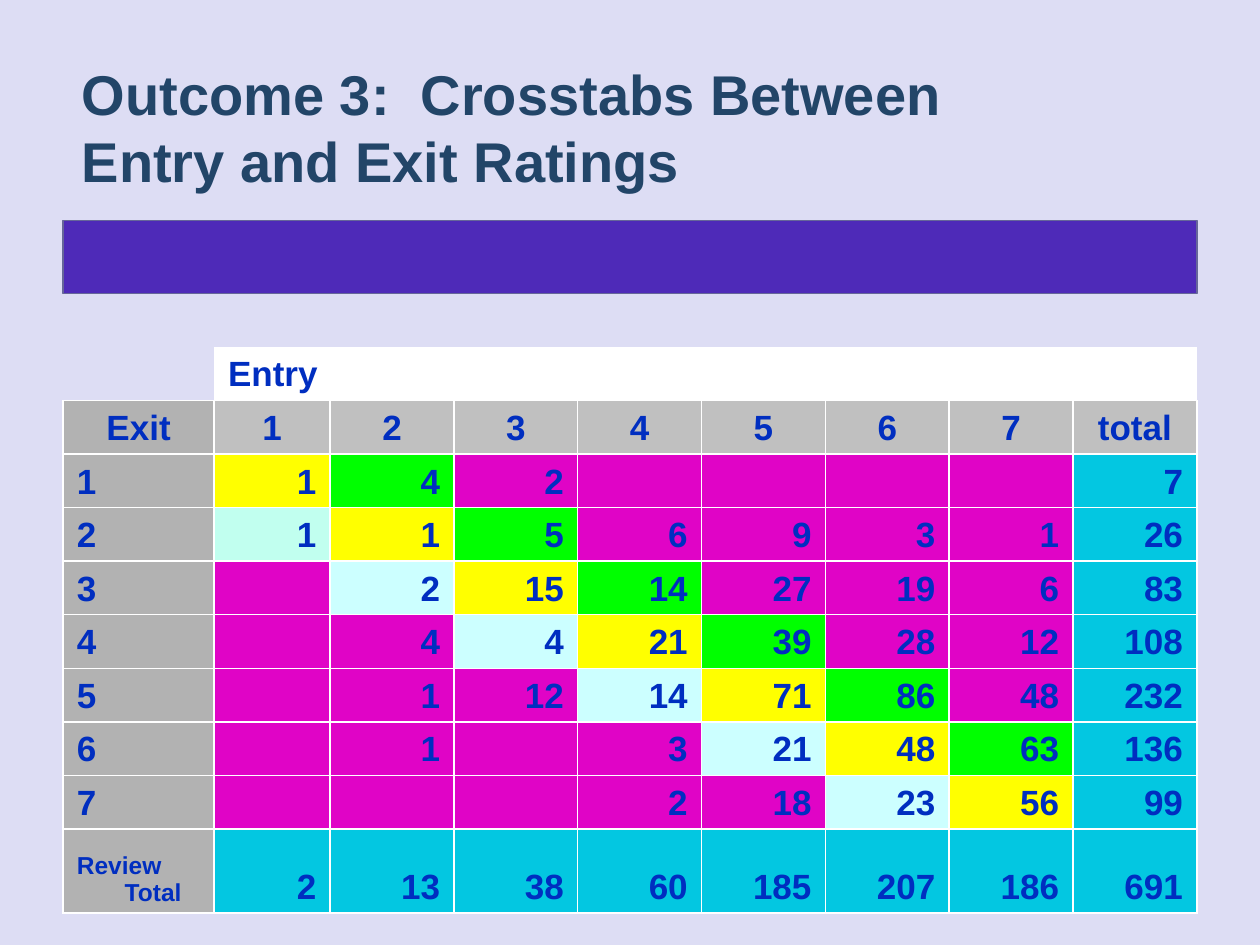
from lxml.etree import SubElement
from pptx import Presentation
from pptx.dml.color import RGBColor
from pptx.enum.shapes import MSO_SHAPE as Shape
from pptx.enum.text import MSO_ANCHOR as Anchor, PP_ALIGN as Align
from pptx.oxml.ns import qn
from pptx.util import Inches, Pt

BACKGROUND = RGBColor(0xDD, 0xDD, 0xF4)
BAND = RGBColor(0x4E, 0x2A, 0xB8)
BAND_EDGE = RGBColor(0x66, 0x66, 0x99)
TITLE = RGBColor(0x22, 0x45, 0x68)
INK = RGBColor(0x00, 0x2E, 0xC0)
WHITE = RGBColor(0xFF, 0xFF, 0xFF)
EXIT_GREY = RGBColor(0xB2, 0xB2, 0xB2)
ENTRY_GREY = RGBColor(0xC0, 0xC0, 0xC0)
SAME = RGBColor(0xFF, 0xFF, 0x00)
ONE_ABOVE = RGBColor(0x00, 0xFF, 0x00)
ONE_BELOW = RGBColor(0xCC, 0xFF, 0xFF)
LOWEST_BELOW = RGBColor(0xC1, 0xFF, 0xEF)
FAR = RGBColor(0xE0, 0x04, 0xC6)
TOTAL = RGBColor(0x03, 0xC7, 0xE1)

HEADINGS = ["Exit", "1", "2", "3", "4", "5", "6", "7", "total"]
RATINGS = [
    ["1", 1, 4, 2, "", "", "", "", 7],
    ["2", 1, 1, 5, 6, 9, 3, 1, 26],
    ["3", "", 2, 15, 14, 27, 19, 6, 83],
    ["4", "", 4, 4, 21, 39, 28, 12, 108],
    ["5", "", 1, 12, 14, 71, 86, 48, 232],
    ["6", "", 1, "", 3, 21, 48, 63, 136],
    ["7", "", "", "", 2, 18, 23, 56, 99],
]
TOTALS = ["Review Total", 2, 13, 38, 60, 185, 207, 186, 691]
ROWS = [[""] * 9, ["", "Entry"] + [""] * 7, HEADINGS, *RATINGS, TOTALS]
ENTRY_ROW, HEADING_ROW, TOTAL_ROW = 1, 2, 10
TOTAL_COLUMN = 8


def write(frame, text, size=20, color=INK, align=Align.LEFT, hanging=0):
    paragraph = frame.paragraphs[0]
    paragraph.text = text
    paragraph.alignment = align
    if hanging:
        properties = paragraph._p.get_or_add_pPr()
        properties.set("marL", str(Inches(hanging)))
        properties.set("indent", str(-Inches(hanging)))
    for run in paragraph.runs:
        run.font.name = "Arial"
        run.font.size = Pt(size)
        run.font.bold = True
        run.font.color.rgb = color


def add_title(slide):
    title = slide.shapes.add_textbox(Inches(0.55), Inches(0.42), Inches(8.92), Inches(1.18))
    title.text_frame.word_wrap = True
    write(title.text_frame, "Outcome 3:  Crosstabs Between\vEntry and Exit Ratings",
          size=32, color=TITLE)


def add_band(slide):
    band = slide.shapes.add_shape(Shape.RECTANGLE, Inches(0.5), Inches(1.75), Inches(9), Inches(0.58))
    band.shadow.inherit = False
    band.fill.solid()
    band.fill.fore_color.rgb = BAND
    band.line.color.rgb = BAND_EDGE
    band.line.width = Pt(0.75)


def set_borders(cell, white_sides):
    for side in "LRTB":
        border = SubElement(cell._tc.get_or_add_tcPr(), qn(f"a:ln{side}"), w=str(Pt(1)))
        if side in white_sides:
            fill = SubElement(border, qn("a:solidFill"))
            SubElement(fill, qn("a:srgbClr"), val=str(WHITE))
        else:
            SubElement(border, qn("a:noFill"))


def cell_fill(row, column):
    if row < HEADING_ROW:
        return WHITE if row == ENTRY_ROW and column else None
    if column == 0:
        return EXIT_GREY
    if row == HEADING_ROW:
        return ENTRY_GREY
    if row == TOTAL_ROW or column == TOTAL_COLUMN:
        return TOTAL
    exit_rating = row - HEADING_ROW
    if (exit_rating, column) == (2, 1):
        return LOWEST_BELOW
    return {0: SAME, 1: ONE_ABOVE, -1: ONE_BELOW}.get(column - exit_rating, FAR)


def cell_align(row, column):
    if row == HEADING_ROW:
        return Align.CENTER
    return Align.RIGHT if row > HEADING_ROW and column else Align.LEFT


def format_cell(cell, value, row, column):
    set_borders(cell, "LRTB" if row >= HEADING_ROW else "B" if row == ENTRY_ROW else "")
    color = cell_fill(row, column)
    if color is None:
        cell.fill.background()
    else:
        cell.fill.solid()
        cell.fill.fore_color.rgb = color
    cell.margin_left = cell.margin_right = Inches(0.11)
    cell.margin_top = cell.margin_bottom = Inches(0.05)
    cell.vertical_anchor = Anchor.BOTTOM
    if value != "":
        write(cell.text_frame, str(value), size=14 if value == "Review Total" else 20,
              align=cell_align(row, column), hanging=0.38)


def add_crosstab(slide):
    crosstab = slide.shapes.add_table(len(ROWS), len(HEADINGS), Inches(0.5), Inches(2.33),
                                      Inches(9), Inches(4.92)).table
    crosstab.first_row = False
    crosstab.horz_banding = False
    widths = [1.2, 0.92] + [(9 - 1.2 - 0.92) / 7] * 7
    heights = [4.25 / 10] * 10 + [0.67]
    for column, width in zip(crosstab.columns, widths):
        column.width = Inches(width)
    for row, height in zip(crosstab.rows, heights):
        row.height = Inches(height)
    crosstab.cell(0, 0).merge(crosstab.cell(0, 1))
    crosstab.cell(ENTRY_ROW, 1).merge(crosstab.cell(ENTRY_ROW, 2))
    for row, values in enumerate(ROWS):
        for column, value in enumerate(values):
            format_cell(crosstab.cell(row, column), value, row, column)


def main():
    deck = Presentation()
    deck.slide_width, deck.slide_height = Inches(10), Inches(7.5)
    slide = deck.slides.add_slide(deck.slide_layouts[6])
    slide.background.fill.solid()
    slide.background.fill.fore_color.rgb = BACKGROUND
    add_band(slide)
    add_crosstab(slide)
    add_title(slide)
    deck.save("out.pptx")


if __name__ == "__main__":
    main()
